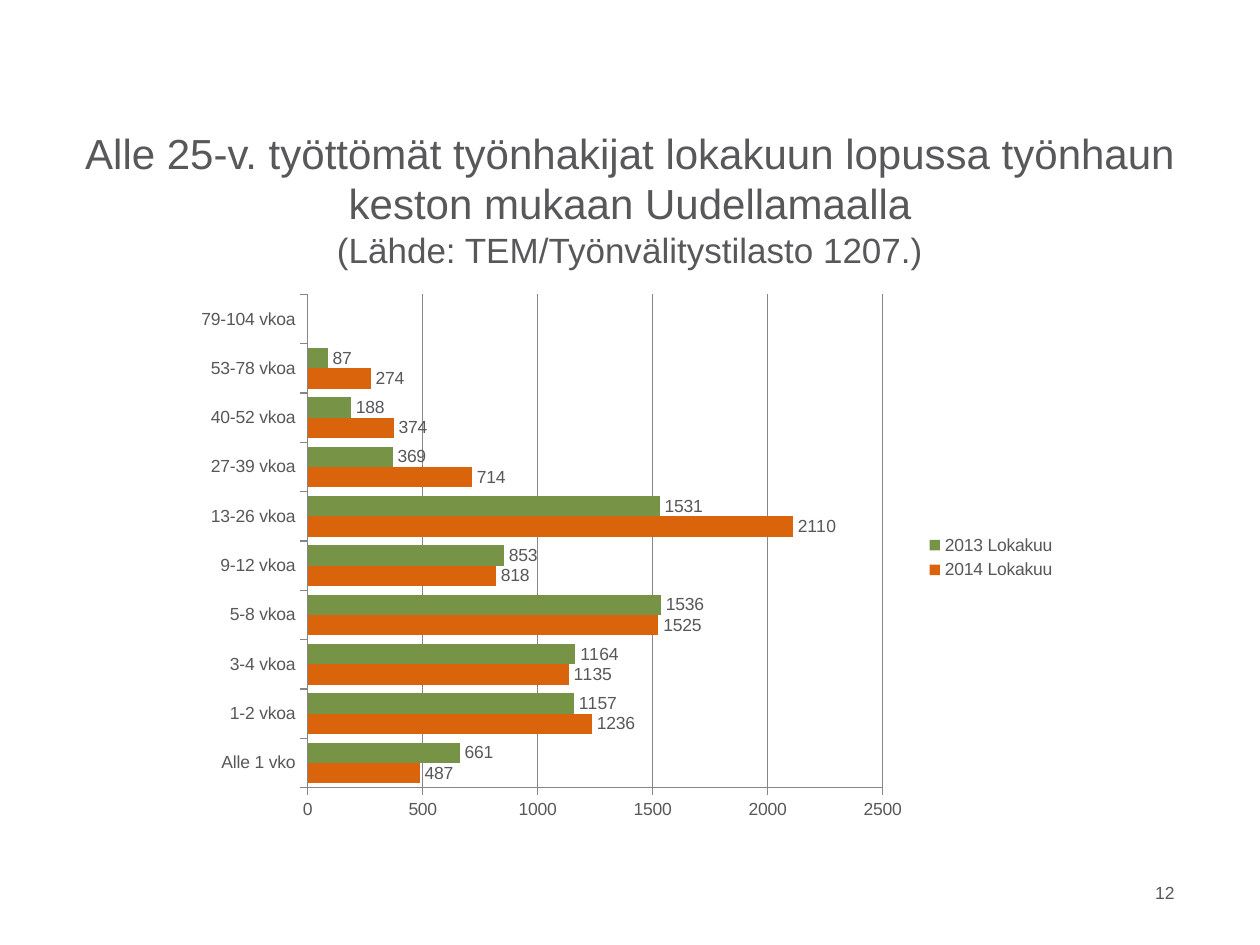
from lxml.etree import SubElement
from pptx import Presentation
from pptx.chart.data import CategoryChartData
from pptx.dml.color import RGBColor
from pptx.enum.chart import XL_CHART_TYPE, XL_LABEL_POSITION, XL_LEGEND_POSITION, XL_TICK_MARK
from pptx.enum.text import MSO_ANCHOR, MSO_AUTO_SIZE, PP_ALIGN
from pptx.oxml.ns import qn
from pptx.util import Inches, Pt

DURATIONS = ["Alle 1 vko", "1-2 vkoa", "3-4 vkoa", "5-8 vkoa", "9-12 vkoa",
             "13-26 vkoa", "27-39 vkoa", "40-52 vkoa", "53-78 vkoa", "79-104 vkoa"]
JOBSEEKERS = [
    ("2014 Lokakuu", "D9640C", [487, 1236, 1135, 1525, 818, 2110, 714, 374, 274, None]),
    ("2013 Lokakuu", "779346", [661, 1157, 1164, 1536, 853, 1531, 369, 188, 87, None]),
]
PLOT_SHARES = {"x": 0.14, "y": 0.02, "w": 0.65, "h": 0.9}


def color(value):
    return RGBColor.from_string(value)


class SlideBuilder:
    font_name = "Arial"
    text_color = "58585A"
    line_color = "868686"

    def __init__(self, deck):
        self.deck = deck
        self.page = deck.slides.add_slide(deck.slide_layouts[5])

    def area(self, left, top, width, height):
        across, down = self.deck.slide_width, self.deck.slide_height
        return int(left * across), int(top * down), int(width * across), int(height * down)

    def style(self, font, size):
        font.name = self.font_name
        font.size = Pt(size)
        font.color.rgb = color(self.text_color)

    def title(self, lines, sizes, shares):
        box = self.page.shapes.title
        box.left, box.top, box.width, box.height = self.area(*shares)
        frame = box.text_frame
        frame.text = "\v".join(lines)
        frame.word_wrap = True
        frame.auto_size = MSO_AUTO_SIZE.NONE
        frame.vertical_anchor = MSO_ANCHOR.MIDDLE
        para = frame.paragraphs[0]
        para.alignment = PP_ALIGN.CENTER
        for span, size in zip(para.runs, sizes):
            self.style(span.font, size)

    def text(self, words, size, shares):
        frame = self.page.shapes.add_textbox(*self.area(*shares)).text_frame
        frame.text = words
        frame.word_wrap = True
        para = frame.paragraphs[0]
        para.alignment = PP_ALIGN.RIGHT
        self.style(para.runs[0].font, size)

    def bar_chart(self, categories, series_rows, size, shares):
        data = CategoryChartData()
        data.categories = categories
        for name, _, values in series_rows:
            data.add_series(name, values)
        chart = self.page.shapes.add_chart(
            XL_CHART_TYPE.BAR_CLUSTERED, *self.area(*shares), data).chart
        self.style(chart.font, size)
        chart.has_title = False
        chart.has_legend = True
        chart.legend.position = XL_LEGEND_POSITION.RIGHT
        chart.legend.include_in_layout = False
        plot = chart.plots[0]
        plot.gap_width = 42
        plot.overlap = 0
        plot.vary_by_categories = False
        for series, (_, fill, _) in zip(plot.series, series_rows):
            series.format.fill.solid()
            series.format.fill.fore_color.rgb = color(fill)
            labels = series.data_labels
            labels.show_value = True
            labels.position = XL_LABEL_POSITION.OUTSIDE_END
            self.style(labels.font, size)
        for axis in (chart.category_axis, chart.value_axis):
            axis.major_tick_mark = XL_TICK_MARK.OUTSIDE
            axis.minor_tick_mark = XL_TICK_MARK.NONE
            axis.format.line.color.rgb = color(self.line_color)
            self.style(axis.tick_labels.font, size)
        values = chart.value_axis
        values.minimum_scale, values.maximum_scale, values.major_unit = 0, 2500, 500
        values.has_major_gridlines = True
        values.major_gridlines.format.line.color.rgb = color(self.line_color)
        self.place_plot(chart)

    def place_plot(self, chart):
        plot_area = next(chart.element.iter(qn("c:plotArea")))
        for old in plot_area.findall(qn("c:layout")):
            plot_area.remove(old)
        layout = SubElement(plot_area, qn("c:layout"))
        plot_area.insert(0, layout)
        manual = SubElement(layout, qn("c:manualLayout"))
        settings = {"layoutTarget": "inner", "xMode": "edge", "yMode": "edge", **PLOT_SHARES}
        for tag, value in settings.items():
            SubElement(manual, qn(f"c:{tag}")).set("val", str(value))


def main():
    deck = Presentation()
    deck.slide_width, deck.slide_height = Inches(10), Inches(7.5)
    builder = SlideBuilder(deck)
    builder.title(
        ["Alle 25-v. työttömät työnhakijat lokakuun lopussa työnhaun keston mukaan Uudellamaalla",
         "(Lähde: TEM/Työnvälitystilasto 1207.)"],
        [24, 20], (0.05, 0.164, 0.9, 0.093))
    builder.bar_chart(DURATIONS, JOBSEEKERS, 10, (0.146, 0.3, 0.702, 0.58))
    builder.text("12", 10, (0.898, 0.927, 0.044, 0.053))
    deck.save("out.pptx")


if __name__ == "__main__":
    main()
